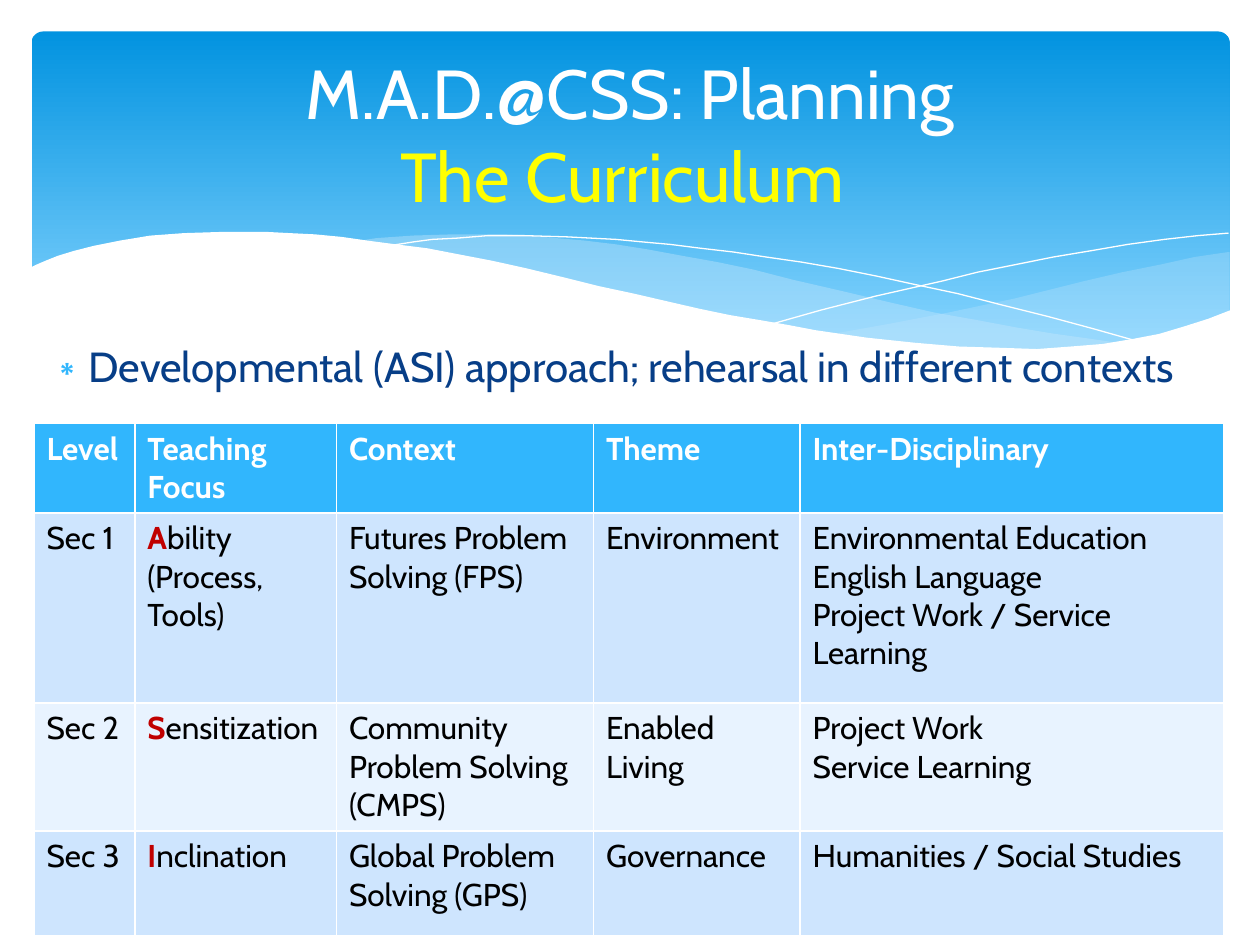
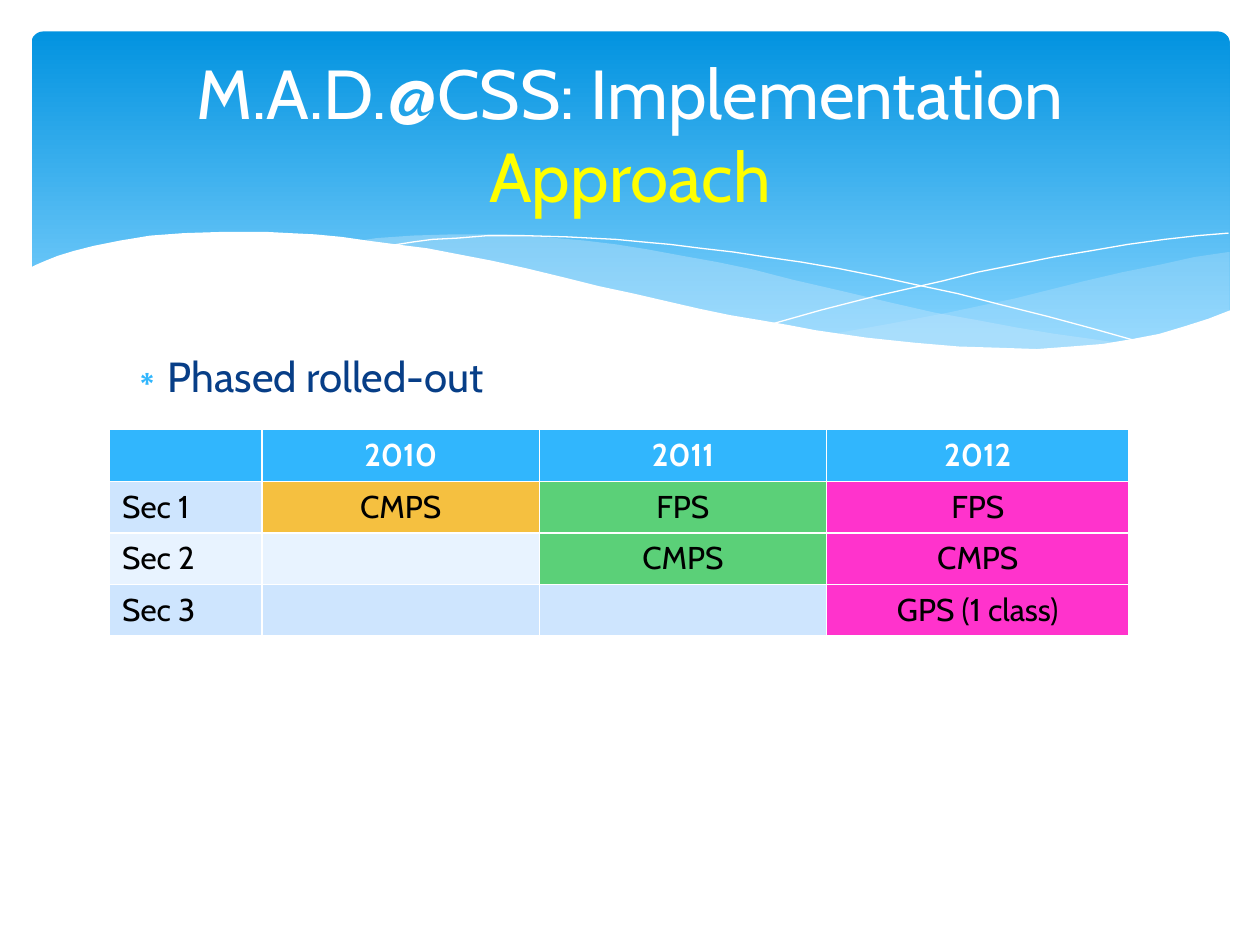
from lxml import etree
from pptx import Presentation
from pptx.dml.color import RGBColor
from pptx.enum.shapes import MSO_SHAPE
from pptx.enum.text import MSO_AUTO_SIZE, PP_ALIGN
from pptx.oxml.ns import qn
from pptx.util import Inches, Pt

FONT = "Cabin"
COLORS = {
    "white": "FFFFFF", "black": "000000", "yellow": "FFFF00", "navy": "073E87",
    "red": "C00000", "band_top": "0293E0", "band_bottom": "83D3FE",
    "wave": "C6E7FC", "accent": "31B6FD", "row_dark": "CEE5FE",
    "row_light": "E8F3FF", "year_2010": "F5C040", "year_2011": "5BD078",
    "year_2012": "FF33CC",
}


def rgb(name):
    return RGBColor.from_string(COLORS[name])


def write(para, text, size=18, color="black", bold=False):
    span = para.add_run()
    span.text = text
    span.font.name = FONT
    span.font.size = Pt(size)
    span.font.bold = bold
    span.font.color.rgb = rgb(color)


RIGHT_WAVE = [
    (9.75, 2), (9.48, 2.04), (9.21, 2.1), (8.91, 2.16), (8.61, 2.23), (8.05, 2.37),
    (7.53, 2.48), (7.06, 2.57), (6.61, 2.65), (6.91, 2.69), (7.18, 2.73),
    (7.45, 2.75), (7.69, 2.77), (8.03, 2.78), (8.35, 2.77), (8.63, 2.75),
    (8.89, 2.72), (9.13, 2.67), (9.35, 2.62), (9.49, 2.57), (9.63, 2.52),
    (9.76, 2.47), (9.76, 2),
]
LONG_WAVE = [
    (8.93, 2.73), (8.66, 2.69), (8.37, 2.65), (8.07, 2.6), (7.75, 2.54),
    (7.41, 2.48), (7.06, 2.4), (6.68, 2.31), (6.29, 2.22), (5.98, 2.14),
    (5.69, 2.08), (5.41, 2.03), (5.14, 1.98), (4.89, 1.94), (4.64, 1.91),
    (4.41, 1.89), (4.2, 1.87), (3.99, 1.86), (3.61, 1.86), (3.28, 1.87),
    (2.99, 1.89), (2.86, 1.91), (3.23, 1.96), (3.62, 2.03), (4.04, 2.11),
    (4.49, 2.22), (4.91, 2.32), (5.3, 2.4), (5.66, 2.48), (6.01, 2.55),
    (6.34, 2.61), (6.65, 2.66), (6.95, 2.7), (7.22, 2.74), (7.48, 2.76),
    (7.73, 2.78), (8.07, 2.79), (8.38, 2.78), (8.67, 2.76),
]
FALLING_LINE = [
    (3.09, 1.95), (3.28, 1.92), (3.43, 1.9), (3.63, 1.89), (3.87, 1.87),
    (4.16, 1.87), (4.5, 1.88), (4.89, 1.9), (5.1, 1.92), (5.32, 1.94),
    (5.56, 1.97), (5.82, 2), (6.08, 2.04), (6.36, 2.08), (6.65, 2.13),
    (6.95, 2.19), (7.27, 2.26), (7.6, 2.33), (7.95, 2.42), (8.31, 2.51),
    (8.68, 2.61), (9.07, 2.72),
]
RISING_LINE = [
    (6.13, 2.57), (6.52, 2.46), (6.95, 2.35), (7.48, 2.23), (7.76, 2.16),
    (8.06, 2.1), (8.36, 2.04), (8.66, 1.99), (8.95, 1.94), (9.24, 1.9),
    (9.51, 1.87), (9.75, 1.85),
]
WHITE_WAVE = [
    (9.77, 2.46), (9.59, 2.53), (9.4, 2.59), (9.2, 2.65), (8.99, 2.69),
    (8.75, 2.73), (8.5, 2.75), (8.23, 2.77), (7.93, 2.76), (7.61, 2.75),
    (7.26, 2.72), (6.88, 2.68), (6.47, 2.62), (6.26, 2.58), (6.03, 2.54),
    (5.79, 2.5), (5.55, 2.45), (5.29, 2.39), (5.03, 2.33), (4.75, 2.27),
    (4.47, 2.2), (4.18, 2.13), (3.91, 2.07), (3.65, 2.02), (3.39, 1.97),
    (3.15, 1.94), (2.92, 1.91), (2.71, 1.88), (2.5, 1.86), (2.3, 1.85),
    (2.11, 1.84), (1.77, 1.84), (1.46, 1.85), (1.19, 1.87), (0.95, 1.91),
    (0.75, 1.95), (0.59, 1.99), (0.46, 2.03), (0.36, 2.07), (0.29, 2.1),
    (0.23, 2.13), (0.23, 3.29), (9.77, 3.29),
]
# Points, fill colour (None draws a white hairline) and opacity in percent
WAVES = [
    (RIGHT_WAVE, "wave", 29),
    (LONG_WAVE, "wave", 40),
    (FALLING_LINE, None, 100),
    (RISING_LINE, None, 100),
    (WHITE_WAVE, "white", 100),
]

PAGES = [
    {
        "title": ("M.A.D.@CSS: Planning", "The Curriculum "),
        "bullet": "Developmental (ASI) approach; rehearsal in different contexts",
        "bullet_at": (0.27, 2.65, 9.45, 0.59),
        "table_at": (0.27, 3.36),
        "columns": [0.8, 1.6, 2.04, 1.64, 3.36],
        "heights": [0.7, 1.51, 1, 0.83],
        "rows": [
            ["Level", "Teaching Focus", "Context", "Theme", "Inter-Disciplinary"],
            ["Sec 1", "Ability\n(Process, Tools)", "Futures Problem Solving (FPS)",
             "Environment",
             "Environmental Education\nEnglish Language\nProject Work / Service Learning"],
            ["Sec 2", "Sensitization", "Community Problem Solving (CMPS)",
             "Enabled Living", "Project Work\nService Learning"],
            ["Sec 3", "Inclination", "Global Problem Solving (GPS)",
             "Governance", "Humanities / Social Studies"],
        ],
        "red_initial_column": 1,
        "column_fills": {},
        "centred": False,
    },
    {
        "title": ("M.A.D.@CSS: Implementation", "Approach"),
        "bullet": "Phased rolled-out",
        "bullet_at": (0.9, 2.73, 8.1, 0.67),
        "table_at": (0.87, 3.41),
        "columns": [1.21, 2.2, 2.28, 2.4],
        "heights": [0.41] * 4,
        "rows": [
            ["", "2010", "2011", "2012"],
            ["Sec 1", "CMPS", "FPS", "FPS"],
            ["Sec 2", "", "CMPS", "CMPS"],
            ["Sec 3", "", "", "GPS (1 class)"],
        ],
        "red_initial_column": None,
        "column_fills": {1: "year_2010", 2: "year_2011", 3: "year_2012"},
        "centred": True,
    },
]

deck = Presentation()
deck.slide_width, deck.slide_height = Inches(10), Inches(7.5)
layout = deck.slide_layouts[1]
pages = [deck.slides.add_slide(layout) for _ in PAGES]

# Layouts cannot add shapes, so the header is drawn on a page and moved to the layout
shapes = pages[0].shapes
band = shapes.add_shape(MSO_SHAPE.ROUNDED_RECTANGLE, Inches(0.25), Inches(0.25),
                        Inches(9.51), Inches(2.7))
band.adjustments[0] = 0.034
band.line.fill.background()
band.fill.gradient()
band.fill.gradient_angle = 270
for stop, position, color in zip(band.fill.gradient_stops, (0, 0.9),
                                 ("band_top", "band_bottom")):
    stop.position = position
    stop.color.rgb = rgb(color)

header = [band]
for points, color, opacity in WAVES:
    corners = [(Inches(x), Inches(y)) for x, y in points]
    builder = shapes.build_freeform(*corners[0])
    builder.add_line_segments(corners[1:], close=color is not None)
    wave = builder.convert_to_shape()
    if color:
        wave.line.fill.background()
        wave.fill.solid()
        wave.fill.fore_color.rgb = rgb(color)
        if opacity < 100:
            tint = wave.element.spPr.find(".//" + qn("a:srgbClr"))
            etree.SubElement(tint, qn("a:alpha"), val=str(opacity * 1000))
    else:
        wave.fill.background()
        wave.line.color.rgb = rgb("white")
        wave.line.width = Pt(0)
    header.append(wave)

layout_tree = layout.element.cSld.spTree
for number, shape in enumerate(header):
    shape.shadow.inherit = False
    shape.element.nvSpPr.cNvPr.set("id", str(100 + number))
    layout_tree.insert(2 + number, shape.element)

for page, content in zip(pages, PAGES):
    title = page.shapes.title
    title.left, title.top = Inches(0.5), Inches(0.37)
    title.width, title.height = Inches(9), Inches(1.37)
    title.text_frame.auto_size = MSO_AUTO_SIZE.NONE
    para = title.text_frame.paragraphs[0]
    para.alignment = PP_ALIGN.CENTER
    write(para, content["title"][0], size=39.6, color="white")
    para.add_line_break()
    write(para, content["title"][1], size=39.6, color="yellow")

    body = page.placeholders[1]
    body.left, body.top, body.width, body.height = map(Inches, content["bullet_at"])
    body.text_frame.auto_size = MSO_AUTO_SIZE.NONE
    para = body.text_frame.paragraphs[0]
    write(para, content["bullet"], size=24, color="navy")
    bullet = para._p.get_or_add_pPr()
    bullet.set("marL", str(Inches(0.3)))
    bullet.set("indent", str(Inches(-0.3)))
    bullet_color = etree.SubElement(bullet, qn("a:buClr"))
    etree.SubElement(bullet_color, qn("a:srgbClr"), val=COLORS["accent"])
    etree.SubElement(bullet, qn("a:buChar"), char="∗")

    rows, columns, heights = content["rows"], content["columns"], content["heights"]
    left, top = map(Inches, content["table_at"])
    table = page.shapes.add_table(len(rows), len(columns), left, top,
                                  Inches(sum(columns)), Inches(sum(heights))).table
    for column, width in zip(table.columns, columns):
        column.width = Inches(width)
    for r, texts in enumerate(rows):
        table.rows[r].height = Inches(heights[r])
        for c, text in enumerate(texts):
            cell = table.cell(r, c)
            fill = "row_dark" if r % 2 else "row_light"
            if r == 0:
                fill = "accent"
            elif text:
                fill = content["column_fills"].get(c, fill)
            cell.fill.solid()
            cell.fill.fore_color.rgb = rgb(fill)
            if not text:
                continue
            for n, line in enumerate(text.split("\n")):
                frame = cell.text_frame
                para = frame.add_paragraph() if n else frame.paragraphs[0]
                if content["centred"] and c > 0:
                    para.alignment = PP_ALIGN.CENTER
                if r and n == 0 and c == content["red_initial_column"]:
                    write(para, line[0], color="red", bold=True)
                    line = line[1:]
                write(para, line, color="black" if r else "white", bold=r == 0)

deck.save("out.pptx")
